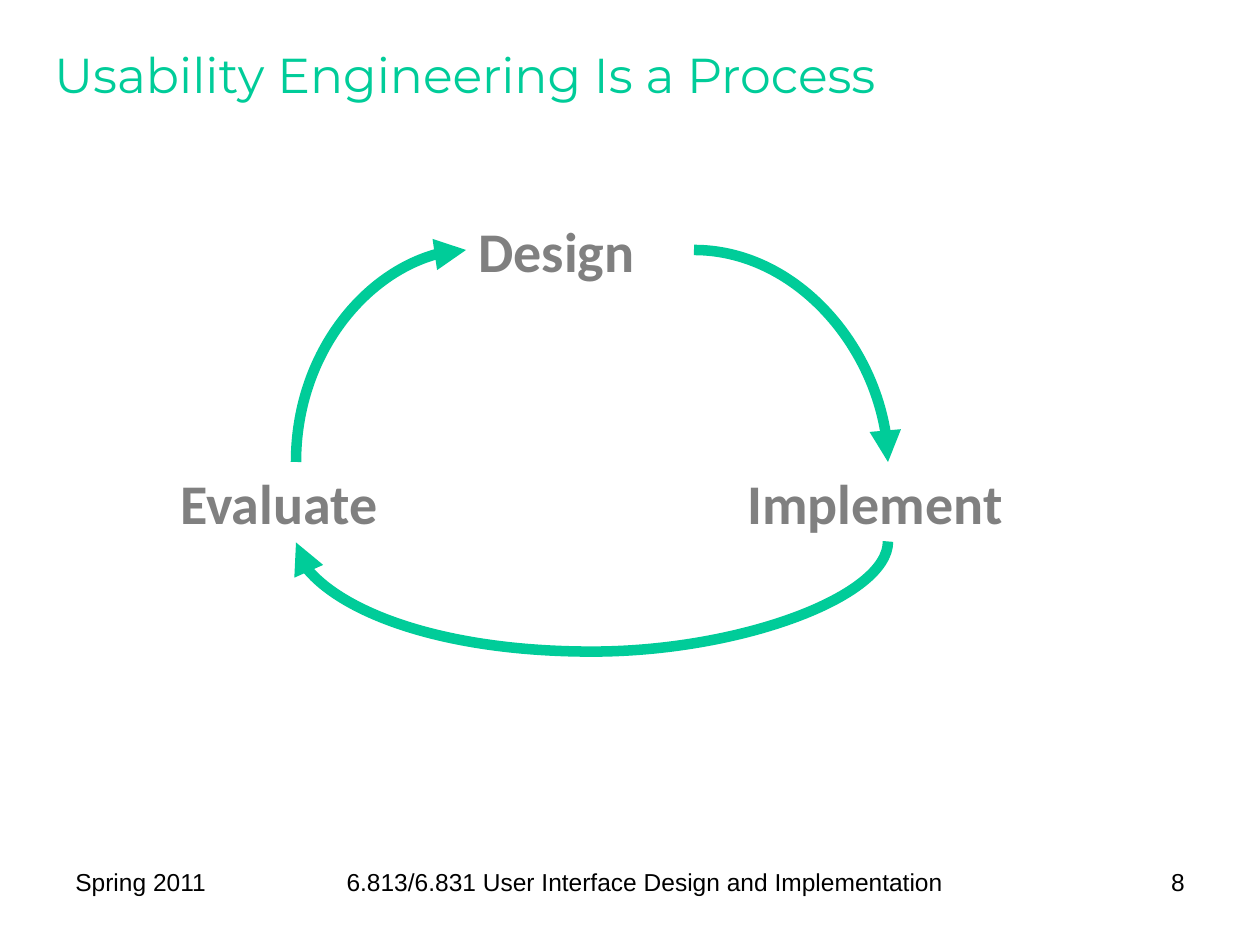
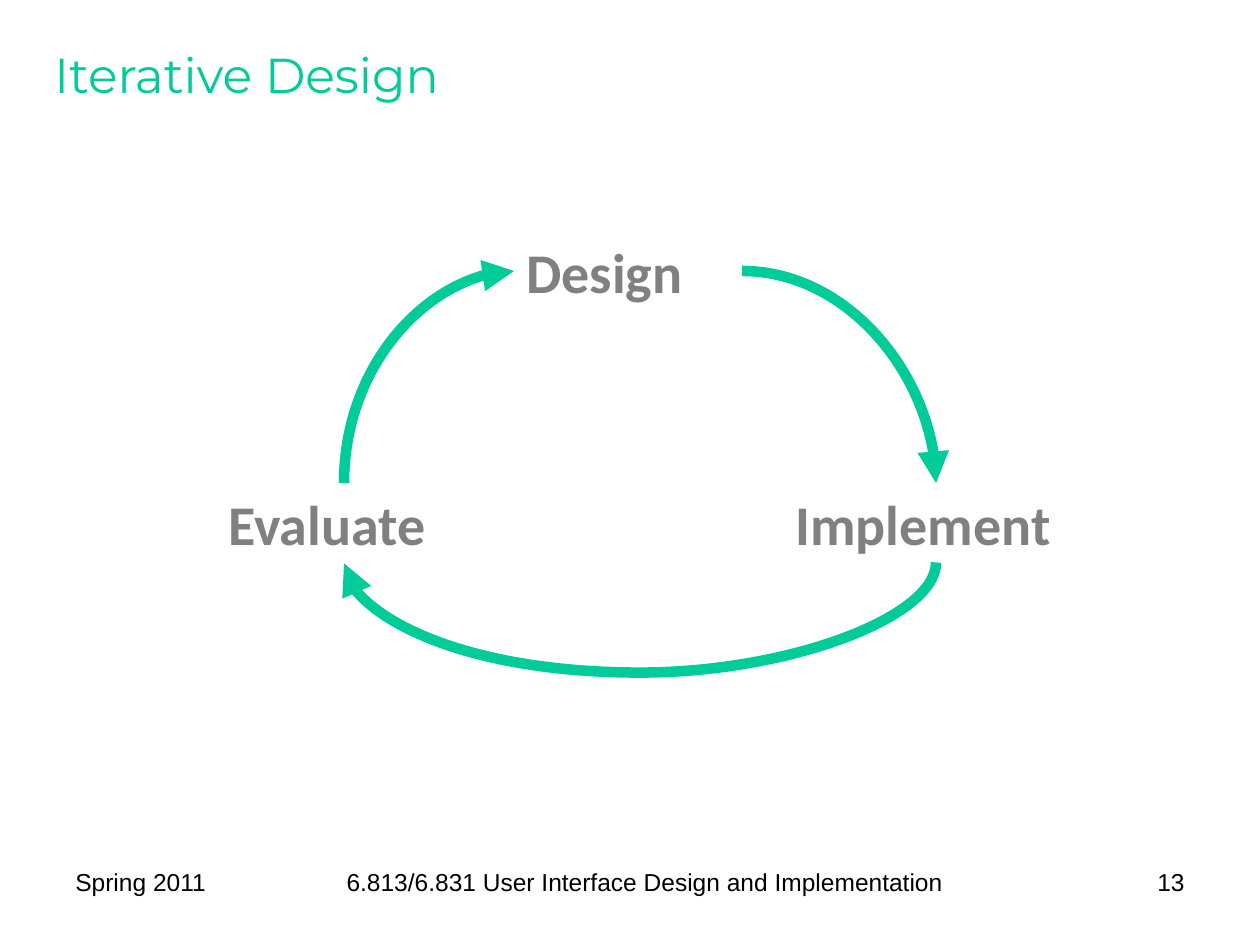
from pptx import Presentation
from pptx.dml.color import RGBColor
from pptx.enum.shapes import MSO_CONNECTOR
from pptx.enum.text import MSO_ANCHOR, MSO_AUTO_SIZE, PP_ALIGN
from pptx.oxml import parse_xml
from pptx.oxml.ns import nsdecls, qn
from pptx.util import Inches, Pt

SCALE = Inches(1) / 126
GREEN, GRAY, BLACK = "00CC99", "808080", "000000"
TITLE = ("Montserrat", 28, GREEN, False)
FOOT = ("Arial", 14, BLACK, False)
STAGE = ("Calibri", 32, GRAY, True)
TOP, LEFT, BOTTOM, RIGHT = range(4)


def px(num):
    return round(num * SCALE)


def color(code):
    return RGBColor.from_string(code)


def add_text(slide, text, box, style, align=PP_ALIGN.LEFT, wrap=True):
    shape = slide.shapes.add_textbox(*map(px, box))
    frame = shape.text_frame
    frame.word_wrap = wrap
    frame.text = text
    para = frame.paragraphs[0]
    para.alignment = align
    name, size, tint, bold = style
    font = para.font
    font.name, font.size, font.bold = name, Pt(size), bold
    font.color.rgb = color(tint)
    return shape


def add_stage(slide, text, box):
    shape = add_text(slide, text, box, STAGE, wrap=False)
    shape.text_frame.auto_size = MSO_AUTO_SIZE.SHAPE_TO_FIT_TEXT
    return shape


def site(shape, side):
    x = shape.left + shape.width * {LEFT: 0, RIGHT: 1}.get(side, 0.5)
    y = shape.top + shape.height * {TOP: 0, BOTTOM: 1}.get(side, 0.5)
    return round(x), round(y)


def add_curve(slide, source, start, target, end, turn=0, drop=None):
    (x1, y1), (x2, y2) = site(source, start), site(target, end)
    curve = slide.shapes.add_connector(MSO_CONNECTOR.CURVE, x1, y1, x2, y2)
    curve.begin_connect(source, start)
    curve.end_connect(target, end)
    curve.line.color.rgb = color(GREEN)
    curve.line.width = Pt(6)

    wide, high = abs(x2 - x1), abs(y2 - y1)
    if turn:
        wide, high = max(high, px(1)), wide
    props = curve._element.spPr
    frame = props.find(qn("a:xfrm"))
    frame.attrib.clear()
    if turn:
        frame.set("rot", str(turn * 60000))
    curve.left, curve.top = (x1 + x2 - wide) // 2, (y1 + y2 - high) // 2
    curve.width, curve.height = wide, high

    shape = props.find(qn("a:prstGeom"))
    if drop is None:
        shape.set("prst", "curvedConnector2")
    else:
        ratio = round(px(drop) / wide * 100000)
        shape.find(qn("a:avLst")).append(parse_xml(
            f'<a:gd {nsdecls("a")} name="adj1" fmla="val {ratio}"/>'))
    curve.line._get_or_add_ln().append(
        parse_xml(f'<a:tailEnd {nsdecls("a")} type="triangle"/>'))
    props.append(parse_xml(f'<a:effectLst {nsdecls("a")}/>'))


def add_frame(slide, title, page):
    head = add_text(slide, title, (42, 21, 1166, 105), TITLE)
    head.text_frame.vertical_anchor = MSO_ANCHOR.MIDDLE
    for text, x, width, align in (
        ("Spring 2011", 63, 189, PP_ALIGN.LEFT),
        ("6.813/6.831 User Interface Design and Implementation",
         262, 766, PP_ALIGN.CENTER),
        (str(page), 1040, 157, PP_ALIGN.RIGHT),
    ):
        add_text(slide, text, (x, 861, width, 65), FOOT, align)


def add_cycle(slide, x, y):
    design = add_stage(slide, "Design", (x + 298, y, 228, 80))
    build = add_stage(slide, "Implement", (x + 567, y + 252, 306, 80))
    check = add_stage(slide, "Evaluate", (x, y + 252, 256, 80))
    add_curve(slide, check, TOP, design, LEFT, turn=270)
    add_curve(slide, design, RIGHT, build, TOP)
    add_curve(slide, build, BOTTOM, check, BOTTOM, turn=90, drop=111)


def main():
    deck = Presentation()
    deck.slide_width, deck.slide_height = px(1260), px(945)
    for title, page, x, y in (
        ("Usability Engineering Is a Process", 8, 168, 210),
        ("Iterative Design", 13, 216, 231),
    ):
        slide = deck.slides.add_slide(deck.slide_layouts[6])
        add_frame(slide, title, page)
        add_cycle(slide, x, y)
    deck.save("out.pptx")


if __name__ == "__main__":
    main()
